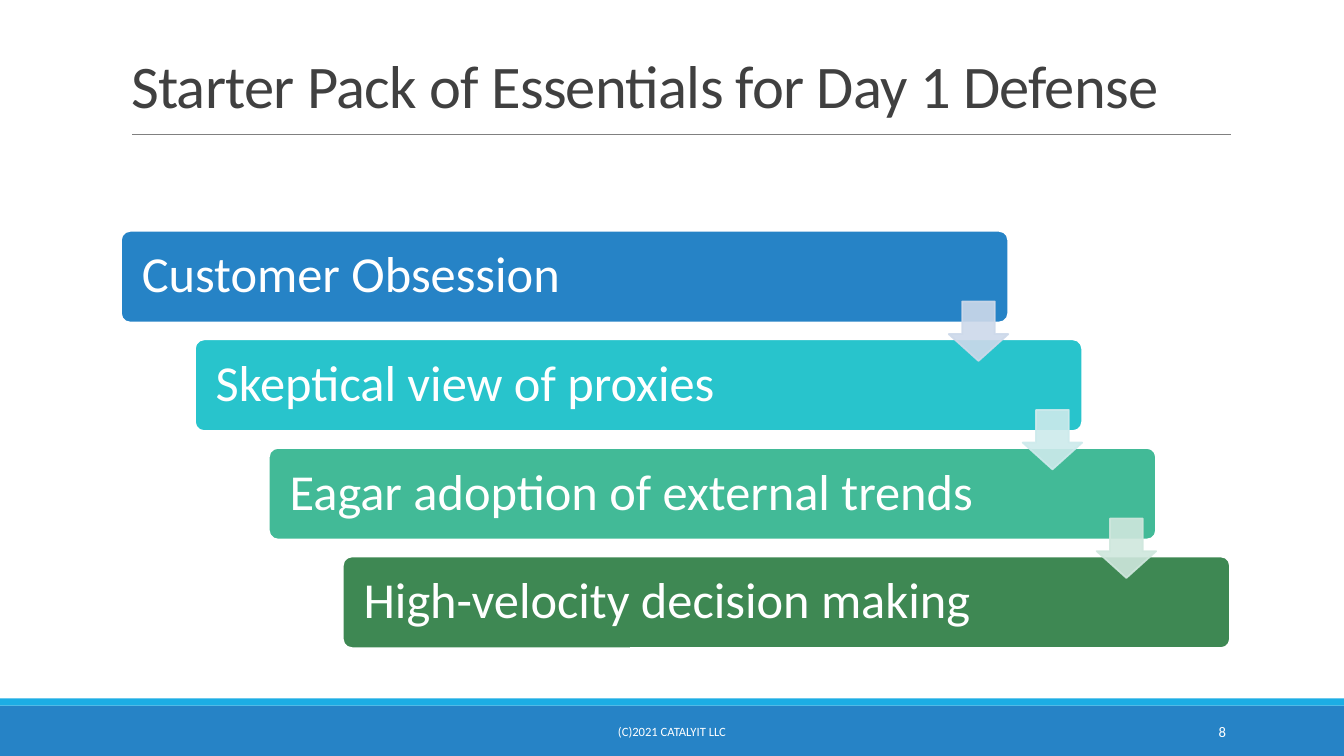
from lxml import etree
from pptx import Presentation
from pptx.dml.color import RGBColor
from pptx.enum.shapes import MSO_CONNECTOR, MSO_SHAPE
from pptx.enum.text import MSO_ANCHOR, MSO_AUTO_SIZE, PP_ALIGN
from pptx.oxml.ns import qn
from pptx.util import Inches, Pt

RECT, ROUNDED, DOWN_ARROW = MSO_SHAPE.RECTANGLE, MSO_SHAPE.ROUNDED_RECTANGLE, MSO_SHAPE.DOWN_ARROW
STRAIGHT = MSO_CONNECTOR.STRAIGHT
LEFT, CENTER, RIGHT = PP_ALIGN.LEFT, PP_ALIGN.CENTER, PP_ALIGN.RIGHT
MIDDLE, BOTTOM = MSO_ANCHOR.MIDDLE, MSO_ANCHOR.BOTTOM
NO_AUTOFIT = MSO_AUTO_SIZE.NONE

WHITE = RGBColor(0xFF, 0xFF, 0xFF)
CHARCOAL = RGBColor(0x40, 0x40, 0x40)
GRAY = RGBColor(0x80, 0x80, 0x80)
BLUE = RGBColor(0x26, 0x83, 0xC6)
SKY = RGBColor(0x1C, 0xAD, 0xE4)
TURQUOISE = RGBColor(0x28, 0xC4, 0xCC)
MINT = RGBColor(0x42, 0xBA, 0x97)
GREEN = RGBColor(0x3E, 0x88, 0x53)
PALE_BLUE = RGBColor(0xCD, 0xD9, 0xEA)
PALE_TURQUOISE = RGBColor(0xCD, 0xEA, 0xEC)
PALE_MINT = RGBColor(0xCF, 0xE7, 0xDD)

ESSENTIALS = [
    ("Customer Obsession", BLUE),
    ("Skeptical view of proxies", TURQUOISE),
    ("Eagar adoption of external trends", MINT),
    ("High-velocity decision making", GREEN),
]
ARROW_COLORS = [PALE_BLUE, PALE_TURQUOISE, PALE_MINT]


def write_text(holder, text, size, color=WHITE, align=LEFT, anchor=MIDDLE,
               line_spacing=1.0, side_inset=0.1, tracking=None):
    frame = holder.text_frame
    frame.word_wrap = True
    frame.auto_size = NO_AUTOFIT
    frame.vertical_anchor = anchor
    frame.margin_left = frame.margin_right = Inches(side_inset)
    frame.margin_top = frame.margin_bottom = Inches(0.05)
    paragraph = frame.paragraphs[0]
    paragraph.alignment = align
    paragraph.line_spacing = line_spacing
    paragraph.space_before = Pt(0)
    run = paragraph.add_run()
    run.text = text
    run.font.name = "Calibri"
    run.font.size = Pt(size)
    run.font.color.rgb = color
    if tracking is not None:
        run.font._element.set("spc", str(int(tracking * 100)))


def add_filled(slide, kind, left, top, width, height, fill, outline=None):
    shape = slide.shapes.add_shape(kind, Inches(left), Inches(top), Inches(width), Inches(height))
    shape.shadow.inherit = False
    shape.fill.solid()
    shape.fill.fore_color.rgb = fill
    if outline is None:
        shape.line.fill.background()
    else:
        shape.line.color.rgb = outline
        shape.line.width = Pt(1.25)
    return shape


def set_opacity(shape, percent):
    """Apply the opacity to both fill and outline."""
    for color in shape._element.spPr.iter(qn("a:srgbClr")):
        etree.SubElement(color, qn("a:alpha")).set("val", str(percent * 1000))


def add_heading(slide, left, top, width, height):
    title = slide.shapes.title
    title.left, title.top = Inches(left), Inches(top)
    title.width, title.height = Inches(width), Inches(height)
    write_text(title, "Starter Pack of Essentials for Day 1 Defense", 43.2, color=CHARCOAL,
               anchor=BOTTOM, line_spacing=0.85, tracking=-0.5)
    rule_y = Inches(top + height + 0.08)
    rule = slide.shapes.add_connector(STRAIGHT, Inches(left + 0.11), rule_y,
                                      Inches(left + width + 0.01), rule_y)
    rule.line.color.rgb = GRAY
    rule.line.width = Pt(0.5)
    etree.SubElement(rule._element.spPr, qn("a:effectLst"))


def add_footer(slide, left, top, width, height):
    stripe = 0.07
    add_filled(slide, RECT, left, top + stripe, width, height - stripe, BLUE)
    add_filled(slide, RECT, left, top, width, stripe, SKY)
    for text, offset, text_width, size, align in (
        ("(C)2021 CATALYIT LLC", 4.03, 5.27, 9, CENTER),
        ("8", 10.83, 1.43, 10.5, RIGHT),
    ):
        box = slide.shapes.add_textbox(Inches(left + offset), Inches(top + 0.13),
                                       Inches(text_width), Inches(0.4))
        write_text(box, text, size, align=align)


def add_staircase(slide, left, top, width, height):
    """Bars step down from the top left to the bottom right, linked by arrows."""
    bar_width, bar_height, arrow_size = 8.8, 0.91, 0.59
    gaps = len(ESSENTIALS) - 1
    step_x = (width - bar_width) / gaps
    step_y = (height - bar_height) / gaps
    for i, (essential, color) in enumerate(ESSENTIALS):
        bar = add_filled(slide, ROUNDED, left + i * step_x, top + i * step_y,
                         bar_width, bar_height, color, outline=WHITE)
        bar.adjustments[0] = 0.1
        write_text(bar, essential, 36, line_spacing=0.9, side_inset=0.18)
    for i, color in enumerate(ARROW_COLORS):
        arrow = add_filled(slide, DOWN_ARROW, left + i * step_x + bar_width - arrow_size,
                           top + i * step_y + 0.7, arrow_size, arrow_size, color, outline=color)
        arrow.adjustments[0] = 0.55
        arrow.adjustments[1] = 0.45
        set_opacity(arrow, 90)


def main():
    prs = Presentation()
    prs.slide_width, prs.slide_height = Inches(13.33), Inches(7.5)
    title_only = prs.slide_layouts[5]
    slide = prs.slides.add_slide(title_only)
    add_footer(slide, 0, 6.93, 13.33, 0.57)
    add_heading(slide, 1.2, 0.31, 11, 0.94)
    add_staircase(slide, 1.2, 2.29, 11, 4.14)
    prs.save("out.pptx")


if __name__ == "__main__":
    main()
